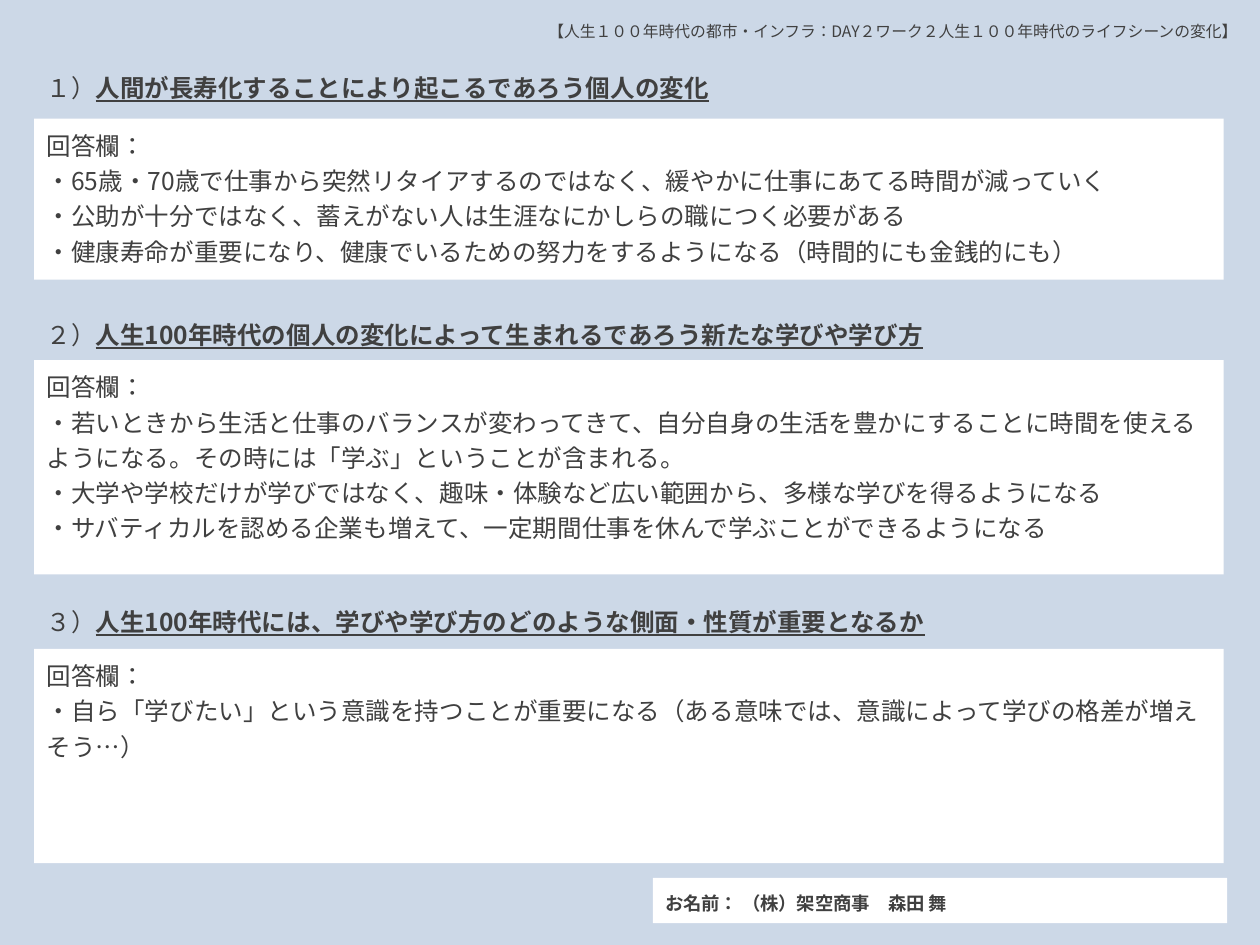
"""Build the worksheet slide on life scenes in the age of 100-year lives."""
import pptx
import pptx.dml.color
import pptx.enum.shapes
import pptx.enum.text
import pptx.oxml
import pptx.oxml.ns
import pptx.util
from pptx.util import Cm

HEAD = "【人生１００年時代の都市・インフラ：DAY２ワーク２人生１００年時代のライフシーンの変化】"
NAME = "お名前： （株）架空商事　森田 舞"
LABEL = "回答欄："
PARTS = [
    {
        "mark": "１）",
        "ask": "人間が長寿化することにより起こるであろう個人の変化",
        "lines": [
            "・65歳・70歳で仕事から突然リタイアするのではなく、緩やかに仕事にあてる時間が減っていく",
            "・公助が十分ではなく、蓄えがない人は生涯なにかしらの職につく必要がある",
            "・健康寿命が重要になり、健康でいるための努力をするようになる（時間的にも金銭的にも）",
        ],
        "top": 1.22, "wide": 14.22, "box": 2.39, "high": 3.25, "slot": 1,
    },
    {
        "mark": "２）",
        "ask": "人生100年時代の個人の変化によって生まれるであろう新たな学びや学び方",
        "lines": [
            "・若いときから生活と仕事のバランスが変わってきて、自分自身の生活を豊かにすることに時間を使えるようになる。その時には「学ぶ」ということが含まれる。",
            "・大学や学校だけが学びではなく、趣味・体験など広い範囲から、多様な学びを得るようになる",
            "・サバティカルを認める企業も増えて、一定期間仕事を休んで学ぶことができるようになる",
        ],
        "top": 6.2, "wide": 21.29, "box": 7.26, "high": 4.32, "slot": 2,
    },
    {
        "mark": "３）",
        "ask": "人生100年時代には、学びや学び方のどのような側面・性質が重要となるか",
        "lines": [
            "・自ら「学びたい」という意識を持つことが重要になる（ある意味では、意識によって学びの格差が増えそう…）",
        ],
        "top": 11.99, "wide": 21.29, "box": 13.08, "high": 4.32, "slot": 4,
    },
]
COLORS = {"back": "CCD8E7", "box": "FFFFFF", "text": "404040"}
FONT = "Noto Sans CJK JP"
LEFT, WIDE = 0.69, 23.98


def color(key):
    return pptx.dml.color.RGBColor.from_string(COLORS[key])


def paint(fill, key):
    fill.solid()
    fill.fore_color.rgb = color(key)


def place(shape, left, top, wide, high):
    shape.left, shape.top = Cm(left), Cm(top)
    shape.width, shape.height = Cm(wide), Cm(high)


def style(run, size, bold, line):
    font = run.font
    font.size, font.bold, font.underline = pptx.util.Pt(size), bold, line
    font.color.rgb = color("text")
    font.name = FONT
    props = run._r.get_or_add_rPr()
    props.set("lang", "ja-JP")
    props.append(pptx.oxml.parse_xml(
        f'<a:ea {pptx.oxml.ns.nsdecls("a")} typeface="{FONT}"/>'))


def write(shape, rows, size=14, bold=False, anchor="TOP"):
    """Fill a shape with rows, each a list of (text, stressed) pairs."""
    frame = shape.text_frame
    frame.auto_size = pptx.enum.text.MSO_AUTO_SIZE.NONE
    frame.word_wrap = True
    frame.vertical_anchor = pptx.enum.text.MSO_ANCHOR[anchor]
    for spot, row in enumerate(rows):
        para = frame.add_paragraph() if spot else frame.paragraphs[0]
        props = para._p.get_or_add_pPr()
        props.set("marL", "0")
        props.set("indent", "0")
        props.append(pptx.oxml.parse_xml(
            f'<a:buNone {pptx.oxml.ns.nsdecls("a")}/>'))
        para.alignment = pptx.enum.text.PP_ALIGN.LEFT
        para.line_spacing = 1.2
        para.space_before = pptx.util.Pt(0)
        for text, stress in row:
            run = para.add_run()
            run.text = text
            style(run, size, bold or stress, stress)


def main():
    deck = pptx.Presentation()
    deck.slide_width, deck.slide_height = Cm(25.4), Cm(19.05)
    slide = deck.slides.add_slide(deck.slide_layouts[4])
    paint(slide.background.fill, "back")
    slots = {item.placeholder_format.idx: item for item in slide.placeholders}

    place(slots[0], 10.8, 0.23, 14.6, 0.91)
    write(slots[0], [[(HEAD, False)]], size=9)

    for part in PARTS:
        title = slide.shapes.add_textbox(
            Cm(LEFT), Cm(part["top"]), Cm(part["wide"]), Cm(1.14))
        write(title, [[(part["mark"], False), (part["ask"], True)]])
        box = slots[part["slot"]]
        place(box, LEFT, part["box"], WIDE, part["high"])
        paint(box.fill, "box")
        write(box, [[(line, False)] for line in [LABEL, *part["lines"]]])

    spare = slots[3].element
    spare.getparent().remove(spare)

    name = slide.shapes.add_shape(
        pptx.enum.shapes.MSO_SHAPE.RECTANGLE,
        Cm(13.16), Cm(17.7), Cm(11.58), Cm(0.91))
    name.shadow.inherit = False
    name.line.fill.background()
    paint(name.fill, "box")
    write(name, [[(NAME, False)]], size=10.5, bold=True, anchor="MIDDLE")
    deck.save("out.pptx")


if __name__ == "__main__":
    main()
